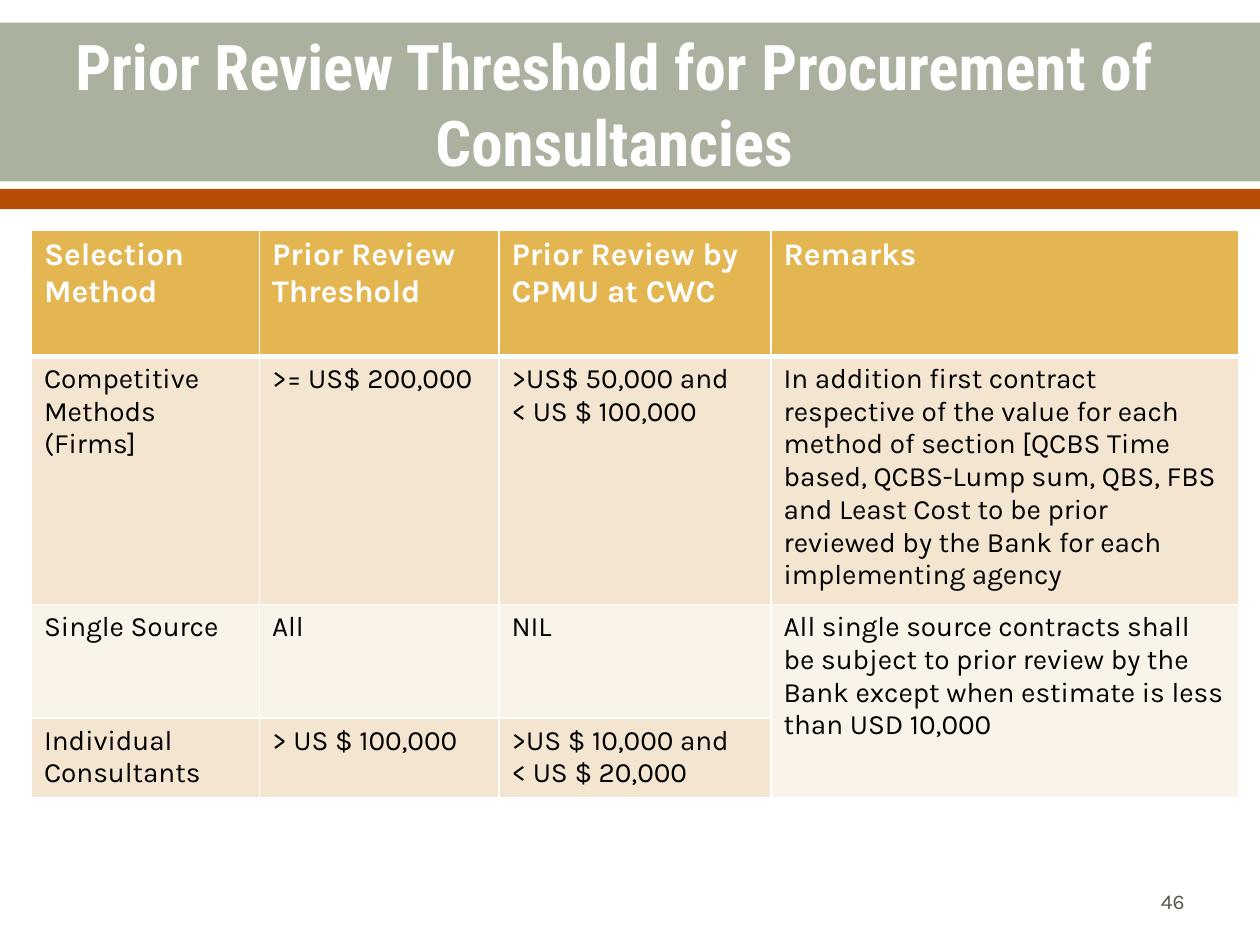
from dataclasses import dataclass

from pptx import Presentation, oxml
from pptx.dml.color import RGBColor
from pptx.enum import shapes, text
from pptx.oxml import ns
from pptx.util import Inches, Pt


@dataclass(frozen=True)
class Theme:
    heading_font: str = "Roboto Condensed"
    body_font: str = "Karla"
    title_size: int = 36
    header_size: int = 18
    cell_size: int = 16
    number_size: int = 12
    white: str = "FFFFFF"
    black: str = "000000"
    grey: str = "55554A"
    sage: str = "ABB19F"
    rust: str = "B74E08"
    gold: str = "E3B651"
    bands: tuple = ("F4E5D0", "FAF3E9")


HEADER = ["Selection\nMethod", "Prior Review\nThreshold",
          "Prior Review by CPMU at CWC", "Remarks"]
ROWS = [
    ["Competitive Methods\n(Firms]", ">= US$ 200,000",
     ">US$ 50,000 and\n< US $ 100,000",
     "In addition first contract respective of the value for each method of "
     "section [QCBS Time based, QCBS-Lump sum, QBS, FBS and Least Cost to be "
     "prior reviewed by the Bank for each implementing agency"],
    ["Single Source", "All", "NIL",
     "All single source contracts shall be subject to prior review by the "
     "Bank except when estimate is less than USD 10,000"],
    ["Individual\nConsultants", "> US $ 100,000",
     ">US $ 10,000 and\n< US $ 20,000", None],
]
COLUMN_WIDTHS = [1.81, 1.9, 2.16, 3.71]
ROW_HEIGHTS = [1, 1.97, 0.9, 0.63]


def write(frame, words, *, font, size, color, bold=False,
          align=text.PP_ALIGN.LEFT):
    """Fill a text frame, one paragraph for each line of words."""
    frame.text = words
    for para in frame.paragraphs:
        para.alignment = align
        for span in para.runs:
            span.font.name = font
            span.font.size = Pt(size)
            span.font.bold = bold
            span.font.color.rgb = RGBColor.from_string(color)


def set_borders(cell, color, **widths):
    """Draw cell edges; widths gives points for lnL, lnR, lnT and lnB."""
    properties = cell._tc.get_or_add_tcPr()
    for position, (edge, width) in enumerate(widths.items()):
        properties.insert(position, oxml.parse_xml(
            f'<a:{edge} {ns.nsdecls("a")} w="{Pt(width)}"><a:solidFill>'
            f'<a:srgbClr val="{color}"/></a:solidFill></a:{edge}>'))


class SlideBuilder:
    def __init__(self, slide, theme):
        self.slide = slide
        self.theme = theme

    def bar(self, top, height, color):
        bar = self.slide.shapes.add_shape(
            shapes.MSO_SHAPE.RECTANGLE,
            0, Inches(top), Inches(10), Inches(height))
        bar.shadow.inherit = False
        bar.fill.solid()
        bar.fill.fore_color.rgb = RGBColor.from_string(color)
        bar.line.fill.background()
        return bar

    def title(self, words, behind):
        """Place the title just in front of the shape behind it."""
        title = self.slide.shapes.title
        title.left, title.top = Inches(0.25), Inches(0.17)
        title.width, title.height = Inches(9.25), Inches(1.25)
        frame = title.text_frame
        frame.auto_size = text.MSO_AUTO_SIZE.NONE
        frame.vertical_anchor = text.MSO_ANCHOR.TOP
        write(frame, words, font=self.theme.heading_font,
              size=self.theme.title_size, color=self.theme.white, bold=True,
              align=text.PP_ALIGN.CENTER)
        behind.element.addnext(title.element)

    def table(self, left, top):
        theme = self.theme
        table = self.slide.shapes.add_table(
            len(ROW_HEIGHTS), len(COLUMN_WIDTHS), Inches(left), Inches(top),
            Inches(sum(COLUMN_WIDTHS)), Inches(sum(ROW_HEIGHTS))).table
        for column, width in zip(table.columns, COLUMN_WIDTHS):
            column.width = Inches(width)
        for row, height in zip(table.rows, ROW_HEIGHTS):
            row.height = Inches(height)
        for r, row in enumerate([HEADER] + ROWS):
            is_header = r == 0
            for c, words in enumerate(row):
                cell = table.cell(r, c)
                fill = theme.gold if is_header else theme.bands[(r - 1) % 2]
                cell.fill.solid()
                cell.fill.fore_color.rgb = RGBColor.from_string(fill)
                set_borders(cell, theme.white, lnL=1, lnR=1,
                            lnT=3 if r == 1 else 1, lnB=3 if is_header else 1)
                if words:
                    write(cell.text_frame, words, font=theme.body_font,
                          size=theme.header_size if is_header
                          else theme.cell_size,
                          color=theme.white if is_header else theme.black,
                          bold=is_header)
        table.cell(2, 3).merge(table.cell(3, 3))

    def page_number(self, number):
        box = self.slide.shapes.add_textbox(
            Inches(7.17), Inches(6.95), Inches(2.33), Inches(0.4))
        frame = box.text_frame
        frame.word_wrap = True
        frame.vertical_anchor = text.MSO_ANCHOR.MIDDLE
        write(frame, str(number), font=self.theme.body_font,
              size=self.theme.number_size, color=self.theme.grey,
              align=text.PP_ALIGN.RIGHT)


def main():
    deck = Presentation()
    deck.slide_width, deck.slide_height = Inches(10), Inches(7.5)
    theme = Theme()
    page = SlideBuilder(deck.slides.add_slide(deck.slide_layouts[5]), theme)
    page.bar(0.18, 1.26, theme.sage)
    stripe = page.bar(1.5, 0.16, theme.rust)
    page.title("Prior Review Threshold for Procurement of Consultancies",
               behind=stripe)
    page.table(0.25, 1.83)
    page.page_number(46)
    deck.save("out.pptx")


if __name__ == "__main__":
    main()
